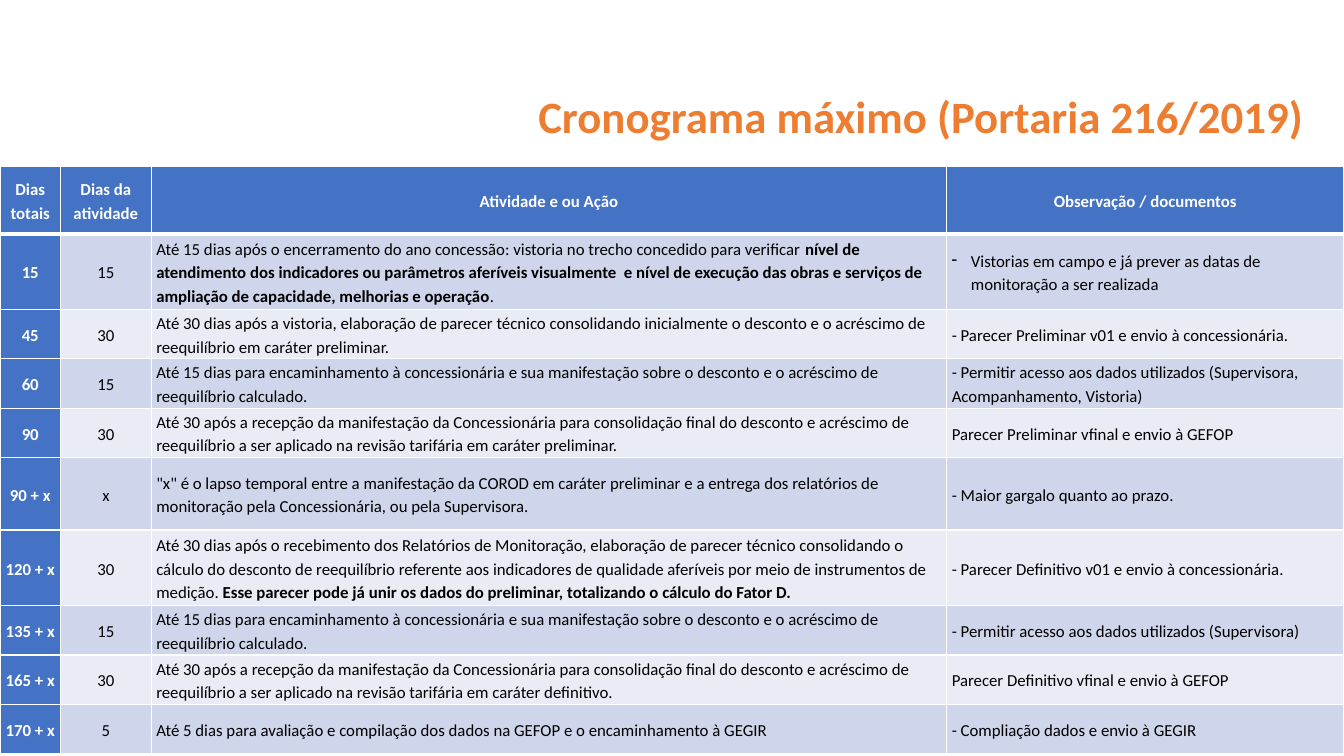
from lxml import etree
from pptx import Presentation
from pptx.dml.color import RGBColor
from pptx.enum.text import MSO_ANCHOR, PP_ALIGN
from pptx.oxml.ns import qn
from pptx.util import Emu, Inches, Pt

LEFT, CENTER, RIGHT = PP_ALIGN.LEFT, PP_ALIGN.CENTER, PP_ALIGN.RIGHT
MIDDLE = MSO_ANCHOR.MIDDLE
ORANGE = RGBColor(0xED, 0x7D, 0x31)
BLUE = RGBColor(0x44, 0x72, 0xC4)
BAND_DARK = RGBColor(0xCF, 0xD5, 0xEA)
BAND_LIGHT = RGBColor(0xE9, 0xEB, 0xF5)
WHITE = RGBColor(0xFF, 0xFF, 0xFF)
BLACK = RGBColor(0, 0, 0)
FONT = "Calibri"
SLIDE_W, SLIDE_H = 13.33, 7.5
TABLE_TOP = 0.22 * SLIDE_H
COLUMNS = [0.6, 0.9, 7.89, 3.94]
ROW_HEIGHTS = [0.67, 0.75, 0.49, 0.49, 0.49, 0.72, 0.75, 0.49, 0.49, 0.49]
BULLET = "• "   # marks a paragraph that gets a real dash bullet
BOLD = "**"     # switches bold on and off

TITLE = "Cronograma máximo (Portaria 216/2019)"
HEADER = ("Dias totais", "Dias da atividade", "Atividade e ou Ação",
          "Observação / documentos")
STEPS = [
    ("15", "15",
     "Até 15 dias após o encerramento do ano concessão: vistoria no trecho concedido "
     "para verificar **nível de atendimento dos indicadores ou parâmetros aferíveis "
     "visualmente  e nível de execução das obras e serviços de ampliação de capacidade, "
     "melhorias e operação**.",
     "• Vistorias em campo e já prever as datas de monitoração a ser realizada"),
    ("45", "30",
     "Até 30 dias após a vistoria, elaboração de parecer técnico consolidando "
     "inicialmente o desconto e o acréscimo de reequilíbrio em caráter preliminar.",
     "- Parecer Preliminar v01 e envio à concessionária."),
    ("60", "15",
     "Até 15 dias para encaminhamento à concessionária e sua manifestação sobre o "
     "desconto e o acréscimo de reequilíbrio calculado.",
     "- Permitir acesso aos dados utilizados (Supervisora, Acompanhamento, Vistoria)"),
    ("90", "30",
     "Até 30 após a recepção da manifestação da Concessionária para consolidação final "
     "do desconto e acréscimo de reequilíbrio a ser aplicado na revisão tarifária em "
     "caráter preliminar.",
     "Parecer Preliminar vfinal e envio à GEFOP"),
    ("90 + x", "x",
     "\"x\" é o lapso temporal entre a manifestação da COROD em caráter preliminar e a "
     "entrega dos relatórios de monitoração pela Concessionária, ou pela Supervisora.",
     "- Maior gargalo quanto ao prazo."),
    ("120 + x", "30",
     "Até 30 dias após o recebimento dos Relatórios de Monitoração, elaboração de "
     "parecer técnico consolidando o cálculo do desconto de reequilíbrio referente aos "
     "indicadores de qualidade aferíveis por meio de instrumentos de medição. **Esse "
     "parecer pode já unir os dados do preliminar, totalizando o cálculo do Fator D.**",
     "- Parecer Definitivo v01 e envio à concessionária."),
    ("135 + x", "15",
     "Até 15 dias para encaminhamento à concessionária e sua manifestação sobre o "
     "desconto e o acréscimo de reequilíbrio calculado.",
     "- Permitir acesso aos dados utilizados (Supervisora)"),
    ("165 + x", "30",
     "Até 30 após a recepção da manifestação da Concessionária para consolidação final "
     "do desconto e acréscimo de reequilíbrio a ser aplicado na revisão tarifária em "
     "caráter definitivo.",
     "Parecer Definitivo vfinal e envio à GEFOP"),
    ("170 + x", "5",
     "Até 5 dias para avaliação e compilação dos dados na GEFOP e o encaminhamento à "
     "GEGIR",
     "- Compliação dados e envio à GEGIR"),
]


def set_all(obj, **values):
    for name, value in values.items():
        setattr(obj, name, value)


def add_run(p, text, size, color, bold):
    r = p.add_run()
    r.text = text
    set_all(r.font, name=FONT, size=Pt(size), bold=bold)
    r.font.color.rgb = color


def set_indent(p, left, right, first=0):
    for name, inches in (("marL", left), ("marR", right), ("indent", first)):
        p._p.get_or_add_pPr().set(name, str(Inches(inches)))


def set_borders(cell, widths):
    tcPr = cell._tc.get_or_add_tcPr()
    for side, width in widths.items():
        ln = etree.SubElement(tcPr, qn("a:ln" + side), w=str(Pt(width)))
        fill = etree.SubElement(ln, qn("a:solidFill"))
        etree.SubElement(fill, qn("a:srgbClr"), val=str(WHITE))


def fill_cell(cell, text, row, col):
    header = row == 0
    strong = header or col == 0
    set_borders(cell, {"L": 1, "R": 1, "T": 3 if row == 1 else 1, "B": 3 if header else 1})
    cell.fill.solid()
    cell.fill.fore_color.rgb = BLUE if strong else BAND_DARK if row % 2 else BAND_LIGHT
    edge = Inches(0.01)
    set_all(cell, vertical_anchor=MIDDLE, margin_left=edge, margin_right=edge,
            margin_top=edge, margin_bottom=edge)

    p = cell.text_frame.paragraphs[0]
    set_all(p, alignment=CENTER if header or col < 2 else LEFT, line_spacing=1.15,
            space_before=Pt(6 if header else 0), space_after=Pt(6 if header else 8))
    side = 0.08 if header else 0.04
    if text.startswith(BULLET):
        text = text.removeprefix(BULLET)
        set_indent(p, 0.23, side, -0.19)
        etree.SubElement(p._p.get_or_add_pPr(), qn("a:buChar"), char="-")
    else:
        set_indent(p, side, side)
    for i, part in enumerate(text.split(BOLD)):
        if part:
            add_run(p, part, 12, WHITE if strong else BLACK, strong or i % 2 == 1)


def add_title(slide):
    sp = slide.shapes.title
    set_all(sp, left=Inches(0.29), top=Inches(0.83), width=Inches(12.74),
            height=Inches(0.7))
    sp.text_frame.vertical_anchor = MIDDLE
    p = sp.text_frame.paragraphs[0]
    set_all(p, alignment=RIGHT, line_spacing=0.9)
    add_run(p, TITLE, 32, ORANGE, True)


def add_schedule(slide):
    rows = [HEADER, *STEPS]
    table = slide.shapes.add_table(
        len(rows), len(COLUMNS), Emu(0), Inches(TABLE_TOP),
        Inches(sum(COLUMNS)), Inches(sum(ROW_HEIGHTS))).table
    table.first_col = True
    for column, width in zip(table.columns, COLUMNS):
        column.width = Inches(width)
    for r, (texts, height) in enumerate(zip(rows, ROW_HEIGHTS)):
        table.rows[r].height = Inches(height)
        for c, text in enumerate(texts):
            fill_cell(table.cell(r, c), text, r, c)


def main():
    prs = Presentation()
    set_all(prs, slide_width=Inches(SLIDE_W), slide_height=Inches(SLIDE_H))
    slide = prs.slides.add_slide(prs.slide_layouts[5])
    add_title(slide)
    add_schedule(slide)
    prs.save("out.pptx")


if __name__ == "__main__":
    main()
